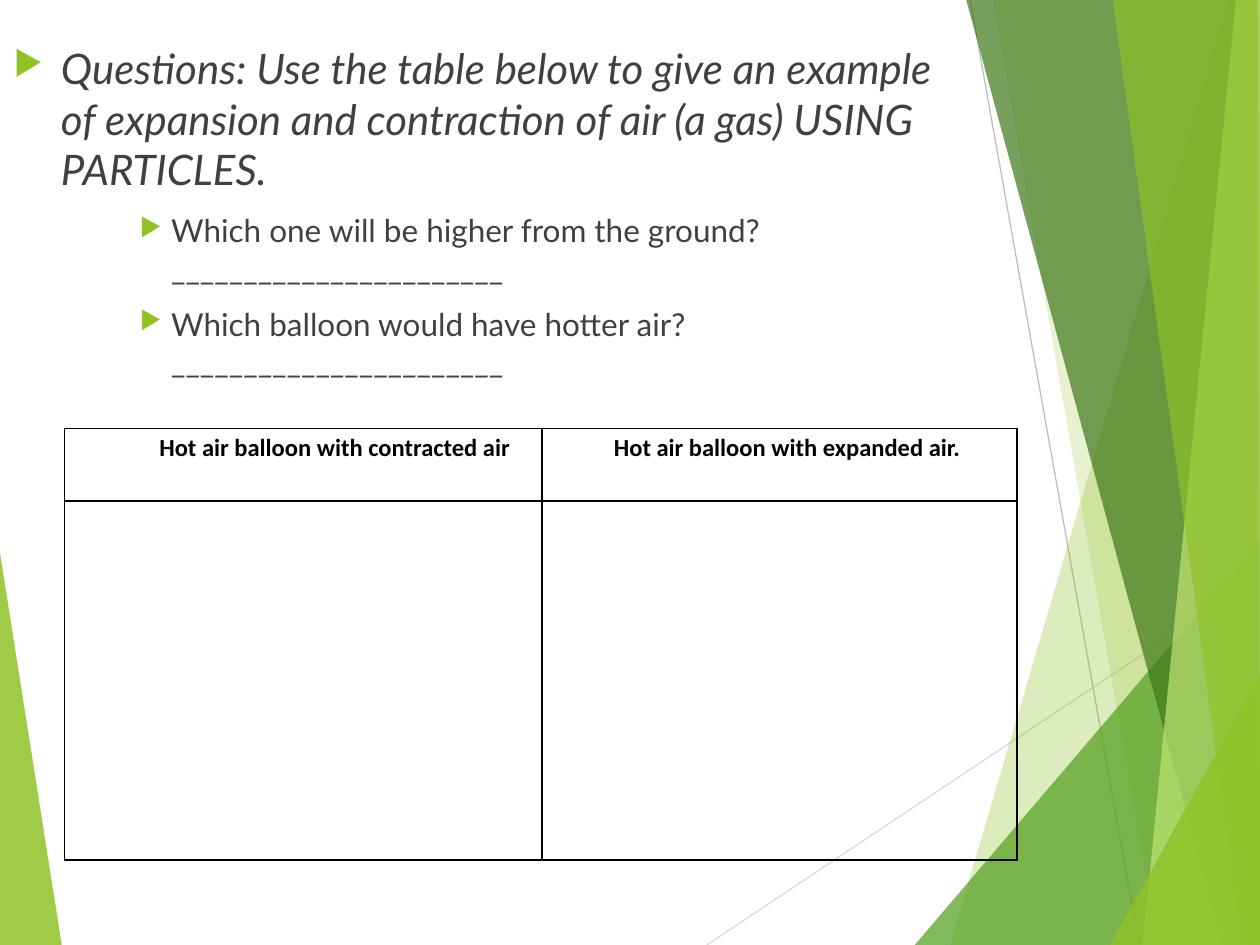
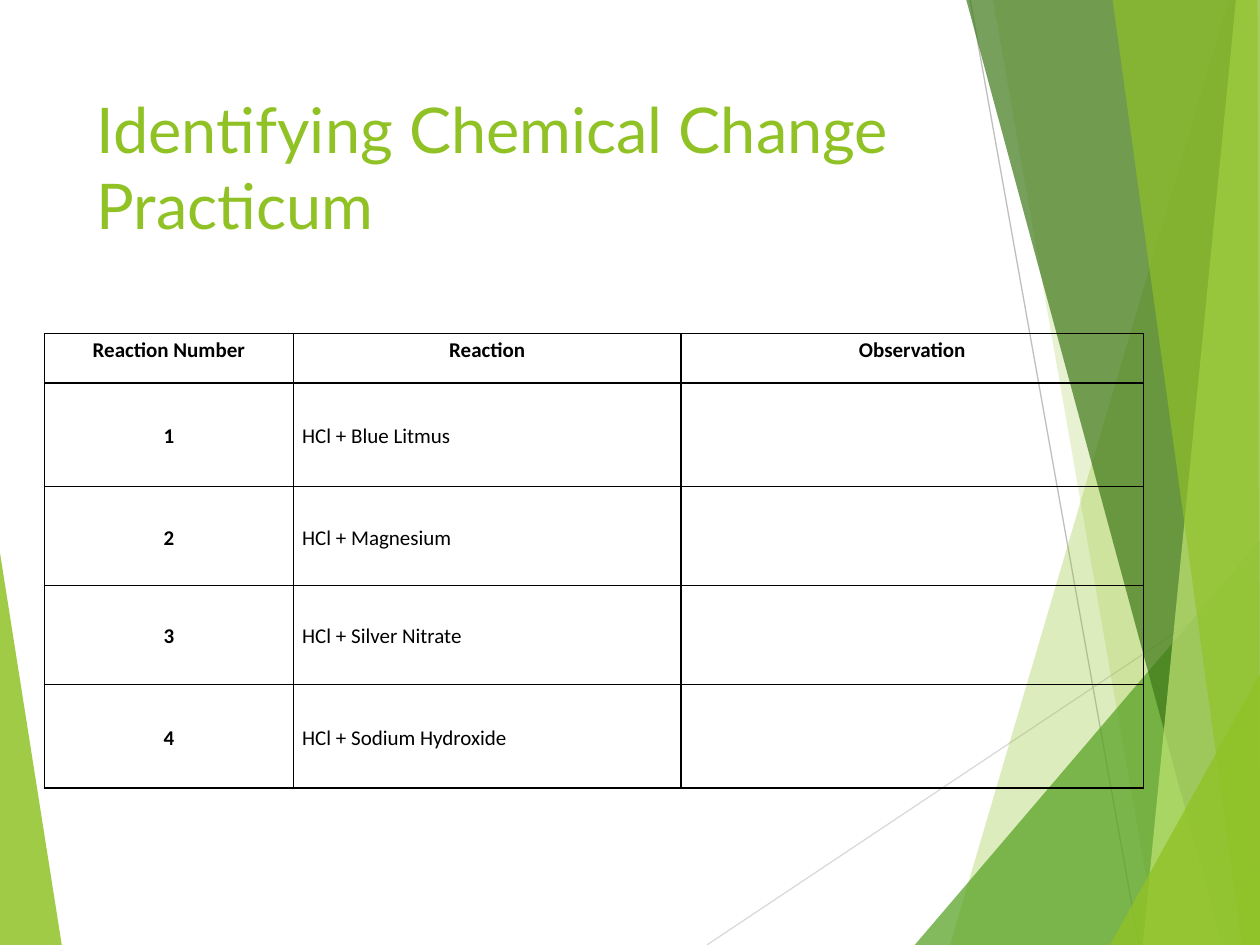
"""Build two science worksheet slides over a shared background of green shards."""
from dataclasses import dataclass
from typing import Any, NamedTuple

from lxml.etree import SubElement
from pptx import Presentation
from pptx.dml.color import RGBColor
from pptx.enum.shapes import MSO_CONNECTOR as Connector
from pptx.enum.text import MSO_ANCHOR as Anchor, PP_ALIGN as Align
from pptx.oxml.ns import qn
from pptx.util import Pt

WIDTH, HEIGHT = 720, 540
LIME = RGBColor(0x90, 0xC2, 0x26)
LEAF = RGBColor(0x54, 0xA0, 0x21)
FOREST = RGBColor(0x3F, 0x78, 0x19)
PALE_LIME = RGBColor(0xC0, 0xE4, 0x74)
LIGHT_GREY = RGBColor(0xD9, 0xD9, 0xD9)
MID_GREY = RGBColor(0xBF, 0xBF, 0xBF)
CHARCOAL = RGBColor(0x40, 0x40, 0x40)
BLACK = RGBColor(0, 0, 0)
BODY_FONT, TABLE_FONT = "Lato", "Calibri"
BLANK_LINE = "_" * 23

Corners = list[tuple[float, float]]


class Shard(NamedTuple):
    color: RGBColor
    opacity: int
    corners: Corners


class Ray(NamedTuple):
    color: RGBColor
    start: tuple[float, float]
    end: tuple[float, float]


class Bullet(NamedTuple):
    text: str
    level: int
    margin: float
    hanging: float
    before: float
    font: dict[str, Any]


class CellText(NamedTuple):
    text: str = ""
    bold: bool = True
    align: Align = Align.CENTER
    indent: float = 0


@dataclass
class Grid:
    left: float
    top: float
    columns: list[float]
    rows: list[float]
    size: float
    cells: list[list[CellText]]


def full_height(top_x: float, bottom_x: float, right_top: float = WIDTH) -> Corners:
    return [(top_x, 0), (bottom_x, HEIGHT), (WIDTH, HEIGHT), (right_top, 0)]


def lower_corner(left: float, top: float, edge: float = WIDTH) -> Corners:
    return [(left, HEIGHT), (edge, top), (edge, HEIGHT)]


LEFT_SHARD = Shard(LIME, 85, lower_corner(35.3, 316, 0))
RAYS = [
    Ray(LIGHT_GREY, (403.9, HEIGHT), (WIDTH, 329.3)),
    Ray(MID_GREY, (554.4, 0), (650.9, HEIGHT)),
]
RIGHT_SHARDS = [
    Shard(LIME, 30, full_height(702, 542.9)),
    Shard(LIME, 20, full_height(567.4, 661.7)),
    Shard(LEAF, 72, lower_corner(522.7, 308.9)),
    Shard(FOREST, 70, full_height(552.2, 698.4)),
    Shard(PALE_LIME, 70, full_height(706.3, 653)),
    Shard(LIME, 65, full_height(635.8, 709.9, 718.6)),
    Shard(LIME, 80, lower_corner(634.3, 385.2)),
]

TITLE_TYPE = {"name": BODY_FONT, "size": Pt(36)}
PROMPT_TYPE = {"name": BODY_FONT, "size": Pt(24), "italic": True}
QUESTION_TYPE = {"name": BODY_FONT, "size": Pt(18), "italic": False}

PROMPT = ("Questions: Use the table below to give an example of expansion and "
          "contraction of air (a gas) USING PARTICLES.")
QUESTIONS = ["Which one will be higher from the ground?", "Which balloon would have hotter air?"]
BULLETS = [Bullet(PROMPT, 0, 27, 27, 0, PROMPT_TYPE)] + [
    Bullet(f"{question} {BLANK_LINE}", 2, 90, 18, 10, QUESTION_TYPE) for question in QUESTIONS
]

BALLOON_GRID = Grid(36.9, 244.8, [272.9, 271.4], [41.5, 205.2], 14, [
    [CellText("Hot air balloon with contracted air", indent=36),
     CellText("Hot air balloon with expanded air.", align=Align.LEFT, indent=36)],
    [CellText(), CellText()],
])
REAGENTS = ["Blue Litmus", "Magnesium", "Silver Nitrate", "Sodium Hydroxide"]
REACTION_GRID = Grid(25.3, 190.7, [142.4, 221.5, 264.2], [28.1, 59.3, 56.5, 56.5, 59.3], 12, [
    [CellText(heading) for heading in ("Reaction Number", "Reaction", "Observation")],
    *([CellText(str(number)), CellText(f"HCl + {reagent}", False, Align.LEFT), CellText()]
      for number, reagent in enumerate(REAGENTS, 1)),
])


def apply(target: Any, values: dict[str, Any]) -> None:
    for name, value in values.items():
        setattr(target, name, value)


def write(para: Any, text: str, color: RGBColor, values: dict[str, Any]) -> None:
    span = para.add_run()
    span.text = text
    apply(span.font, values)
    span.font.color.rgb = color


def draw_shard(page: Any, shard: Shard) -> None:
    first, *others = [(Pt(x), Pt(y)) for x, y in shard.corners]
    builder = page.shapes.build_freeform(*first)
    builder.add_line_segments(others, close=True)
    shape = builder.convert_to_shape()
    shape.shadow.inherit = False
    shape.line.fill.background()
    shape.fill.solid()
    shape.fill.fore_color.rgb = shard.color
    tint = shape.fill._xPr.find(qn("a:solidFill"))[0]
    SubElement(tint, qn("a:alpha"), val=str(shard.opacity * 1000))


def draw_ray(page: Any, ray: Ray) -> None:
    ends = [Pt(length) for length in (*ray.start, *ray.end)]
    line = page.shapes.add_connector(Connector.STRAIGHT, *ends)
    line.line.color.rgb = ray.color
    line.line.width = Pt(0.75)
    SubElement(line._element.spPr, qn("a:effectLst"))


def add_page(deck: Any) -> Any:
    page = deck.slides.add_slide(deck.slide_layouts[6])
    draw_shard(page, LEFT_SHARD)
    for ray in RAYS:
        draw_ray(page, ray)
    for shard in RIGHT_SHARDS:
        draw_shard(page, shard)
    return page


def add_frame(page: Any, left: float, top: float, width: float, height: float) -> Any:
    box = page.shapes.add_textbox(Pt(left), Pt(top), Pt(width), Pt(height))
    apply(box.text_frame, {"word_wrap": True, "vertical_anchor": Anchor.TOP})
    return box.text_frame


def write_bullet(para: Any, bullet: Bullet) -> None:
    apply(para, {"level": bullet.level, "space_before": Pt(bullet.before)})
    write(para, bullet.text, CHARCOAL, bullet.font)
    layout = para._p.get_or_add_pPr()
    layout.set("marL", str(Pt(bullet.margin)))
    layout.set("indent", str(-Pt(bullet.hanging)))
    SubElement(SubElement(layout, qn("a:buClr")), qn("a:srgbClr"), val=str(LIME))
    SubElement(layout, qn("a:buSzPct"), val="80000")
    SubElement(layout, qn("a:buChar"), char="▶")


def add_borders(cell: Any) -> None:
    properties = cell._tc.get_or_add_tcPr()
    for side in ("lnL", "lnR", "lnT", "lnB"):
        edge = SubElement(properties, qn(f"a:{side}"), w=str(Pt(1)))
        SubElement(SubElement(edge, qn("a:solidFill")), qn("a:srgbClr"), val=str(BLACK))


def fill_cell(cell: Any, content: CellText, size: float, anchor: Anchor) -> None:
    apply(cell, {"margin_left": Pt(5), "margin_right": Pt(5), "margin_top": 0,
                 "margin_bottom": 0, "vertical_anchor": anchor})
    add_borders(cell)
    cell.fill.background()
    if content.text:
        para = cell.text_frame.paragraphs[0]
        apply(para, {"alignment": content.align, "line_spacing": 1.15})
        para._p.get_or_add_pPr().set("marL", str(Pt(content.indent)))
        write(para, content.text, BLACK,
              {"name": TABLE_FONT, "size": Pt(size), "bold": content.bold})


def draw_grid(page: Any, grid: Grid) -> None:
    table = page.shapes.add_table(
        len(grid.rows), len(grid.columns), Pt(grid.left), Pt(grid.top),
        Pt(sum(grid.columns)), Pt(sum(grid.rows))).table
    apply(table, {"first_row": False, "horz_banding": False})
    for column, width in zip(table.columns, grid.columns):
        column.width = Pt(width)
    for index, (row, height) in enumerate(zip(table.rows, grid.rows)):
        row.height = Pt(height)
        anchor = Anchor.MIDDLE if index else Anchor.TOP
        for cell, content in zip(row.cells, grid.cells[index]):
            fill_cell(cell, content, grid.size, anchor)


def build_balloon_page(deck: Any) -> None:
    page = add_page(deck)
    frame = add_frame(page, 0.7, 20.9, 540.7, 470.9)
    for index, bullet in enumerate(BULLETS):
        write_bullet(frame.add_paragraph() if index else frame.paragraphs[0], bullet)
    draw_grid(page, BALLOON_GRID)


def build_reaction_page(deck: Any) -> None:
    page = add_page(deck)
    title = add_frame(page, 48.2, 48.2, 499.7, 103.7)
    write(title.paragraphs[0], "Identifying Chemical Change Practicum", LIME, TITLE_TYPE)
    draw_grid(page, REACTION_GRID)


def main() -> None:
    deck = Presentation()
    apply(deck, {"slide_width": Pt(WIDTH), "slide_height": Pt(HEIGHT)})
    build_balloon_page(deck)
    build_reaction_page(deck)
    deck.save("out.pptx")


if __name__ == "__main__":
    main()
